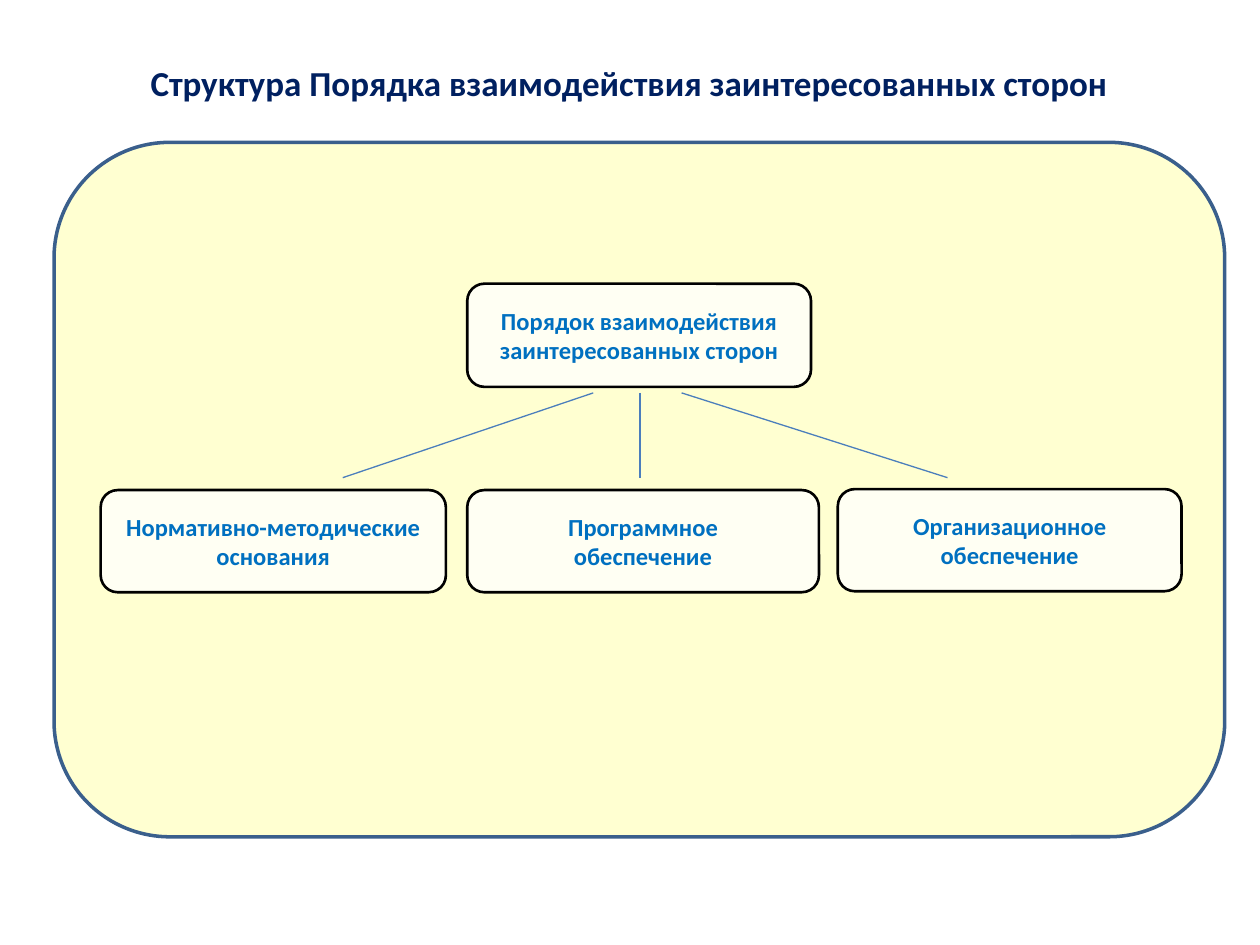
from lxml import etree
from pptx import Presentation
from pptx import util as u
from pptx.dml.color import RGBColor
from pptx.enum import shapes, text
from pptx.oxml.ns import qn

NAVY = RGBColor(0x00, 0x20, 0x60)
BLUE = RGBColor(0x00, 0x70, 0xC0)
LINK = RGBColor(0x4B, 0x7E, 0xBC)
FRAME = RGBColor(0x3A, 0x5F, 0x8C)
YELLOW = RGBColor(0xFF, 0xFF, 0x00)
WHITE = RGBColor(0xFF, 0xFF, 0xFF)
BLACK = RGBColor(0x00, 0x00, 0x00)

ROOT = (8.33, 2.85, 6.93, 2.08, ["Порядок взаимодействия заинтересованных сторон"])
BRANCHES = [
    (0.94, 7.01, 6.96, 2.06, ["Нормативно-методические", "основания"]),
    (8.33, 7.01, 7.09, 2.06, ["Программное", "обеспечение"]),
    (15.8, 6.99, 6.93, 2.06, ["Организационное обеспечение"]),
]
LINK_TOP, LINK_BOTTOM = 5.05, 6.76
LINK_ENDS = [(10.87, 5.82), (11.81, 11.81), (12.65, 18.01)]


def write_lines(frame, lines, size, color):
    """Fill a text frame with centred bold paragraphs."""
    frame.word_wrap = True
    frame.text = "\n".join(lines)
    for paragraph in frame.paragraphs:
        paragraph.alignment = text.PP_ALIGN.CENTER
        font = paragraph.font
        font.name, font.size, font.bold = "Calibri", u.Pt(size), True
        font.color.rgb = color


def add_rounded(slide, box, fill, opacity, line, width):
    """Add a rounded rectangle with a translucent fill."""
    rounded = slide.shapes.add_shape(
        shapes.MSO_SHAPE.ROUNDED_RECTANGLE, *map(u.Cm, box))
    rounded.shadow.inherit = False
    rounded.fill.solid()
    rounded.fill.fore_color.rgb = fill
    tint = rounded.fill._xPr.find(qn("a:solidFill"))[0]
    etree.SubElement(tint, qn("a:alpha"), val=str(opacity * 1000))
    rounded.line.color.rgb = line
    rounded.line.width = u.Pt(width)
    return rounded


def add_link(slide, x1, y1, x2, y2):
    """Add a thin straight line between two points."""
    link = slide.shapes.add_connector(
        shapes.MSO_CONNECTOR.STRAIGHT, *map(u.Cm, (x1, y1, x2, y2)))
    link.line.color.rgb = LINK
    link.line.width = u.Pt(0.75)
    etree.SubElement(link._element.spPr, qn("a:effectLst"))


def add_title(slide, left, top, width, height):
    """Place the slide heading."""
    title = slide.shapes.add_textbox(*map(u.Cm, (left, top, width, height)))
    write_lines(title.text_frame,
                ["Структура Порядка взаимодействия заинтересованных сторон"], 20, NAVY)
    title.text_frame.auto_size = text.MSO_AUTO_SIZE.SHAPE_TO_FIT_TEXT


def add_structure(slide, left, top, width, height):
    """Place the panel with the root, its links and its branches."""
    add_rounded(slide, (left, top, width, height), YELLOW, 18, FRAME, 2)
    for start, end in LINK_ENDS:
        add_link(slide, left + start, top + LINK_TOP, left + end, top + LINK_BOTTOM)
    for x, y, w, h, lines in [ROOT, *BRANCHES]:
        node = add_rounded(slide, (left + x, top + y, w, h), WHITE, 75, BLACK, 1.5)
        node.text_frame.vertical_anchor = text.MSO_ANCHOR.MIDDLE
        write_lines(node.text_frame, lines, 14, BLUE)


def main():
    """Build and save the slide."""
    deck = Presentation()
    deck.slide_width, deck.slide_height = u.Cm(25.4), u.Cm(19.05)
    slide = deck.slides.add_slide(deck.slide_layouts[6])
    add_structure(slide, 1.09, 2.87, 23.6, 14)
    add_title(slide, 1.09, 1.12, 23.19, 1.12)
    deck.save("out.pptx")


if __name__ == "__main__":
    main()
